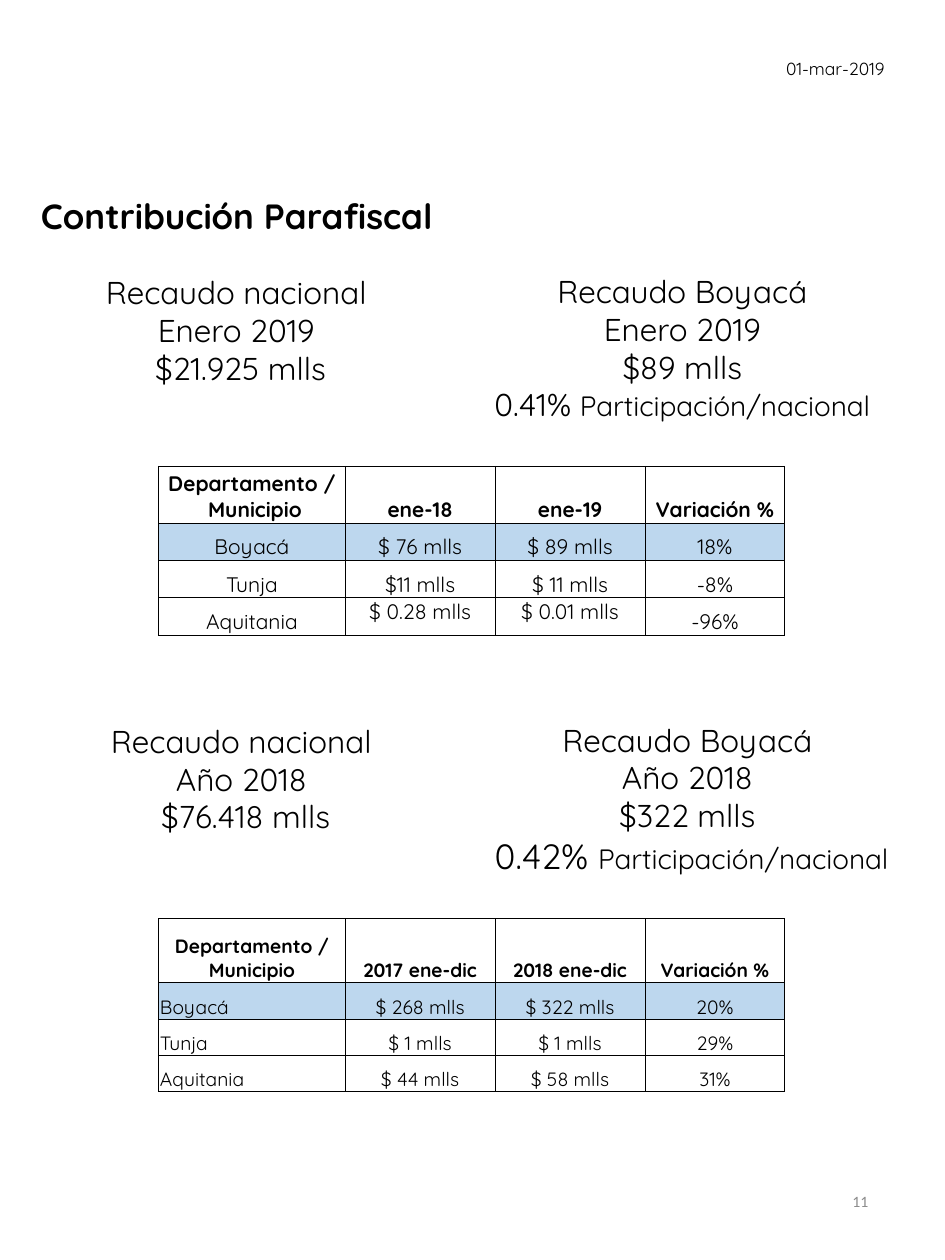
from dataclasses import dataclass

from lxml import etree
from pptx import Presentation, util as u
from pptx.dml.color import RGBColor
from pptx.enum import text
from pptx.oxml.ns import qn

# The page is a grid of 75 columns by 100 rows
PAGE_WIDTH, PAGE_HEIGHT = u.Inches(7.5), u.Inches(10)
COLUMN, ROW = PAGE_WIDTH / 75, PAGE_HEIGHT / 100
LEFT, CENTER, RIGHT = text.PP_ALIGN.LEFT, text.PP_ALIGN.CENTER, text.PP_ALIGN.RIGHT
TOP, MIDDLE, BOTTOM = text.MSO_ANCHOR.TOP, text.MSO_ANCHOR.MIDDLE, text.MSO_ANCHOR.BOTTOM


@dataclass(frozen=True)
class Theme:
    font: str = "Quicksand"
    number_font: str = "Calibri"
    ink: str = "000000"
    muted: str = "8C8C8C"
    paper: str = "FFFFFF"
    highlight: str = "BDD7EE"
    title: int = 20
    figure: int = 18
    share: int = 16
    date: int = 10
    page_number: int = 9
    border: float = 0.5


THEME = Theme()


@dataclass(frozen=True)
class Box:
    left: float
    top: float
    width: float
    height: float

    def lengths(self):
        return (round(self.left * COLUMN), round(self.top * ROW),
                round(self.width * COLUMN), round(self.height * ROW))


def add_run(paragraph, words, size, bold=False, color=THEME.ink, font=THEME.font):
    run = paragraph.add_run()
    run.text = words
    run.font.size = u.Pt(size)
    run.font.bold = bold
    run.font.name = font
    run.font.color.rgb = RGBColor.from_string(color)


def add_text(slide, box, lines, align=CENTER, anchor=TOP, wrap=True, spacing=None, **style):
    """Each line is a list of (words, size) runs."""
    frame = slide.shapes.add_textbox(*box.lengths()).text_frame
    frame.word_wrap = wrap
    frame.vertical_anchor = anchor
    for index, line in enumerate(lines):
        paragraph = frame.add_paragraph() if index else frame.paragraphs[0]
        paragraph.alignment = align
        paragraph.line_spacing = spacing
        for words, size in line:
            add_run(paragraph, words, size, **style)


def add_collection(slide, box, lines, share=()):
    """Collected amount for a period, with an optional share line."""
    paragraphs = [[(line, THEME.figure)] for line in lines]
    if share:
        paragraphs.append(list(share) + [("Participación/nacional", THEME.share)])
    add_text(slide, box, paragraphs)


def draw_borders(cell):
    properties = cell._tc.get_or_add_tcPr()
    for side in ("a:lnL", "a:lnR", "a:lnT", "a:lnB"):
        line = etree.SubElement(properties, qn(side), w=str(u.Pt(THEME.border)))
        fill = etree.SubElement(line, qn("a:solidFill"))
        etree.SubElement(fill, qn("a:srgbClr"), val=THEME.ink)


def fill_cell(cell, words, size, align, anchor, bold, color):
    cell.margin_left = cell.margin_right = cell.margin_top = u.Inches(0.01)
    cell.margin_bottom = 0
    cell.vertical_anchor = anchor
    paragraph = cell.text_frame.paragraphs[0]
    paragraph.alignment = align
    for index, part in enumerate(words.split("\n")):
        if index:
            paragraph.add_line_break()
        add_run(paragraph, part, size, bold)
    draw_borders(cell)
    cell.fill.solid()
    cell.fill.fore_color.rgb = RGBColor.from_string(color)


def add_comparison(slide, box, rows, header_height, size, label_align=CENTER, top_cells=()):
    """Table of places by period; the first body row is highlighted."""
    table = slide.shapes.add_table(len(rows), len(rows[0]), *box.lengths()).table
    table.first_row = table.horz_banding = False
    for column, width in zip(table.columns, (14.8, 11.9, 11.9, 11.1)):
        column.width = round(width * COLUMN)
    body_height = (box.height - header_height) / (len(rows) - 1)
    for r, values in enumerate(rows):
        table.rows[r].height = round((body_height if r else header_height) * ROW)
        for c, words in enumerate(values):
            fill_cell(table.cell(r, c), words, size,
                      align=label_align if r and c == 0 else CENTER,
                      anchor=TOP if (r, c) in top_cells else BOTTOM,
                      bold=r == 0,
                      color=THEME.highlight if r == 1 else THEME.paper)


def add_page_frame(slide):
    """Date, title and page number."""
    add_text(slide, Box(61.4, 4.1, 10.4, 2.7), [[("01-mar-2019", THEME.date)]],
             align=LEFT, wrap=False)
    add_text(slide, Box(-1.6, 15.3, 40.8, 3.7), [[("Contribución Parafiscal", THEME.title)]],
             spacing=0.9, bold=True)
    add_text(slide, Box(53, 92.7, 16.9, 5.3), [[("11", THEME.page_number)]],
             align=RIGHT, anchor=MIDDLE, color=THEME.muted, font=THEME.number_font)


def main():
    presentation = Presentation()
    presentation.slide_width, presentation.slide_height = PAGE_WIDTH, PAGE_HEIGHT
    slide = presentation.slides.add_slide(presentation.slide_layouts[6])
    add_page_frame(slide)

    # January 2019
    add_collection(slide, Box(0, 21.2, 37.5, 10.1),
                   ["Recaudo nacional", "Enero 2019", " $21.925 mlls"])
    add_collection(slide, Box(35.4, 21.1, 37.5, 13.1),
                   ["Recaudo Boyacá", "Enero 2019", "$89 mlls"],
                   share=[("0.41% ", THEME.figure)])
    add_comparison(slide, Box(12.6, 37, 49.7, 13.4), [
        ("Departamento /\n Municipio", "ene-18", "ene-19", "Variación %"),
        ("Boyacá", " $ 76 mlls ", " $ 89 mlls ", "18%"),
        ("Tunja", " $11 mlls ", " $ 11 mlls ", "-8%"),
        ("Aquitania", " $ 0.28 mlls ", " $ 0.01 mlls ", "-96%"),
    ], header_height=4.5, size=12, top_cells={(3, 1), (3, 2)})

    # Full year 2018
    add_collection(slide, Box(0.4, 56.8, 37.5, 10.1),
                   ["Recaudo nacional", "Año 2018", " $76.418 mlls"])
    add_collection(slide, Box(35.8, 56.7, 37.5, 16.8),
                   ["Recaudo Boyacá", "Año 2018", "$322 mlls"],
                   share=[(" ", THEME.figure), ("0.42% ", THEME.title)])
    add_comparison(slide, Box(12.6, 72.9, 49.7, 13.7), [
        ("Departamento / Municipio", "2017 ene-dic", "2018 ene-dic", "Variación %"),
        ("Boyacá", " $ 268 mlls ", " $ 322 mlls ", "20%"),
        ("Tunja", " $ 1 mlls ", " $ 1 mlls ", "29%"),
        ("Aquitania", " $ 44 mlls ", " $ 58 mlls ", "31%"),
    ], header_height=5.1, size=11, label_align=LEFT)

    presentation.save("out.pptx")


if __name__ == "__main__":
    main()
